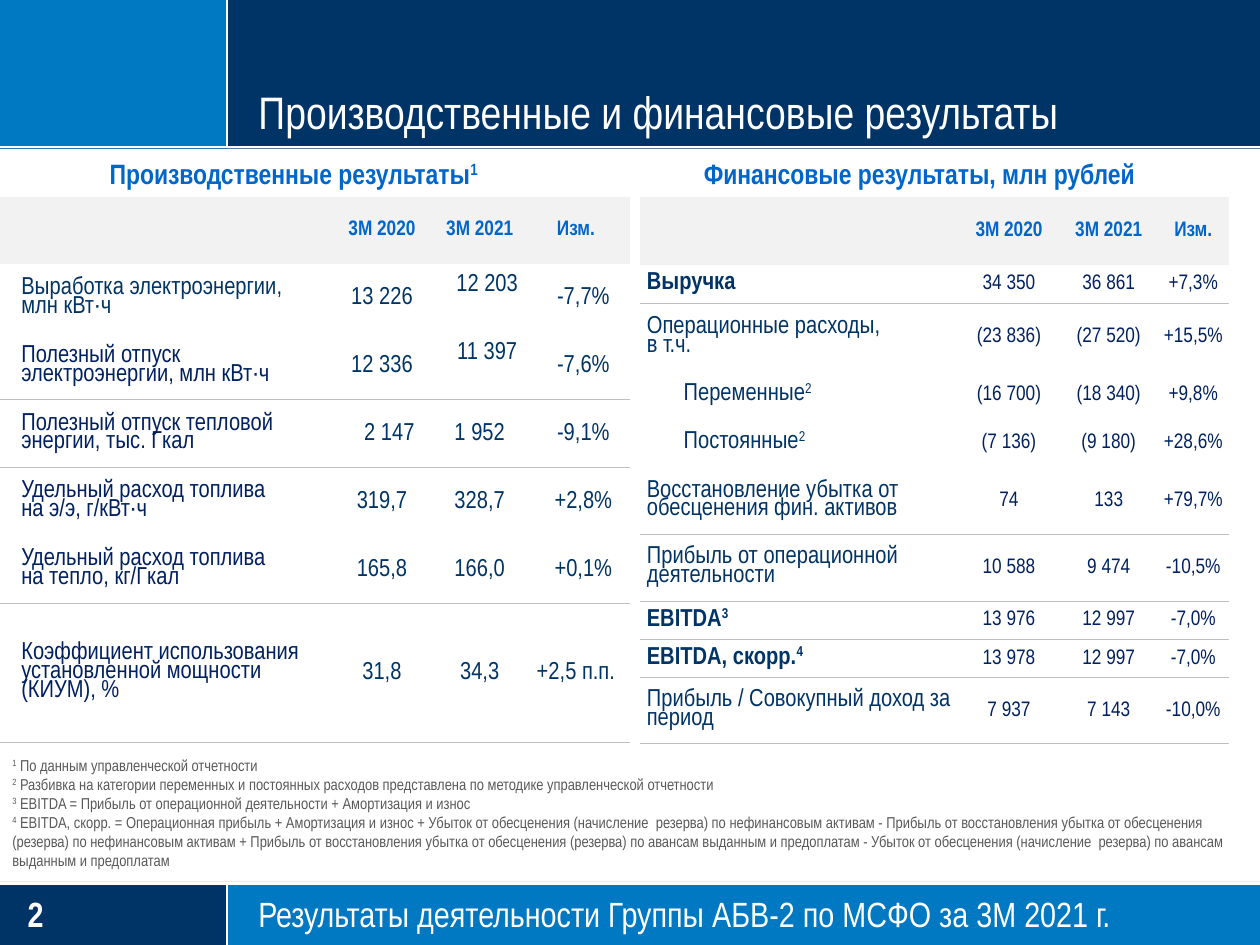
from lxml import etree
from pptx import Presentation
from pptx import util as u
from pptx.dml.color import RGBColor
from pptx.enum import shapes, text
from pptx.oxml.ns import qn

NAVY, SKY, WHITE = "003366", "0079C2", "FFFFFF"
INK, ACCENT, GREY = "002060", "0066CC", "595959"
HEADER_FILL, RULE = "F2F2F2", "BFBFBF"
NO_STYLE_TABLE = "{2D5ABB26-0587-4C30-8999-92F81FD0307C}"
LEFT, CENTER = text.PP_ALIGN.LEFT, text.PP_ALIGN.CENTER
BOTTOM, MIDDLE, TOP = (text.MSO_ANCHOR.BOTTOM, text.MSO_ANCHOR.MIDDLE,
                       text.MSO_ANCHOR.TOP)
PERIODS = ["3М 2020", "3М 2021", "Изм."]

# Each row: height, rule below, label, values, label format
FINANCE = [
    (0.77, True, "Выручка", ["34 350", "36 861", "+7,3%"], {"bold": True}),
    (1.37, False, "Операционные расходы,\nв т.ч.", ["(23 836)", "(27 520)", "+15,5%"], {}),
    (0.97, False, "Переменные^2^", ["(16 700)", "(18 340)", "+9,8%"], {"indent": 0.74}),
    (0.97, False, "Постоянные^2^", ["(7 136)", "(9 180)", "+28,6%"], {"indent": 0.74}),
    (1.35, True, "Восстановление убытка от обесценения фин. активов",
     ["74", "133", "+79,7%"], {}),
    (1.35, True, "Прибыль от операционной деятельности",
     ["10 588", "9 474", "-10,5%"], {}),
    (0.77, True, "EBITDA^3^", ["13 976", "12 997", "-7,0%"], {"bold": True}),
    (0.77, True, "EBITDA, скорр.^4^", ["13 978", "12 997", "-7,0%"], {"bold": True}),
    (1.33, True, "Прибыль / Совокупный доход за период",
     ["7 937", "7 143", "-10,0%"], {}),
]
PRODUCTION = [
    (1.37, False, "Выработка электроэнергии,\vмлн кВт∙ч",
     ["13 226", "12 203", "-7,7%"], {"color": NAVY}),
    (1.37, True, "Полезный отпуск электроэнергии, млн кВт∙ч",
     ["12 336", "11 397", "-7,6%"], {}),
    (1.37, True, "Полезный отпуск тепловой энергии, тыс. Гкал",
     ["2 147", "1 952", "-9,1%"], {}),
    (1.37, False, "Удельный расход топлива\vна э/э, г/кВт∙ч",
     ["319,7", "328,7", "+2,8%"], {}),
    (1.37, True, "Удельный расход топлива\vна тепло, кг/Гкал",
     ["165,8", "166,0", "+0,1%"], {}),
    (2.8, True, "Коэффициент использования установленной мощности (КИУМ), %",
     ["31,8", "34,3", "+2,5 п.п."], {}),
]
RAISED = {"12 203", "11 397"}
SHIFTED = RAISED | {"2 147", "-7,7%", "-7,6%", "-9,1%", "+2,8%", "+0,1%"}

FOOTNOTES = """^1^ По данным управленческой отчетности
^2^ Разбивка на категории переменных и постоянных расходов представлена по методике управленческой отчетности
^3^ EBITDA = Прибыль от операционной деятельности + Амортизация и износ
^4^ EBITDA, скорр. = Операционная прибыль + Амортизация и износ + Убыток от обесценения (начисление  резерва) по нефинансовым активам - Прибыль от восстановления убытка от обесценения (резерва) по нефинансовым активам + Прибыль от восстановления убытка от обесценения (резерва) по авансам выданным и предоплатам - Убыток от обесценения (начисление  резерва) по авансам выданным и предоплатам"""


def rgb(value):
    return RGBColor.from_string(value)


def write(frame, content, size=14, color=NAVY, bold=False, align=LEFT,
          indent=0, spacing=1.0, font="Arial Narrow"):
    """Fill a frame: \\n starts a paragraph, \\v a line, ^...^ is superscript."""
    for number, line in enumerate(content.split("\n")):
        paragraph = frame.add_paragraph() if number else frame.paragraphs[0]
        paragraph.alignment = align
        paragraph.line_spacing = spacing
        paragraph.space_before = paragraph.space_after = u.Pt(0)
        properties = paragraph._p.get_or_add_pPr()
        properties.set("marL", str(u.Cm(indent)))
        properties.set("indent", "0")
        etree.SubElement(properties, qn("a:buNone"))
        for part_number, part in enumerate(line.split("^")):
            for piece_number, piece in enumerate(part.split("\v")):
                if piece_number:
                    paragraph.add_line_break()
                if not piece:
                    continue
                run = paragraph.add_run()
                run.text = piece
                run.font.name, run.font.size, run.font.bold = font, u.Pt(size), bold
                run.font.color.rgb = rgb(color)
                if part_number % 2:
                    run.font._element.set("baseline", "30000")


def set_margins(target, left, top, right, bottom):
    target.margin_left, target.margin_top = u.Cm(left), u.Cm(top)
    target.margin_right, target.margin_bottom = u.Cm(right), u.Cm(bottom)


def rule_below(cell):
    line = etree.Element(qn("a:lnB"), w=str(u.Pt(0.75)))
    fill = etree.SubElement(line, qn("a:solidFill"))
    etree.SubElement(fill, qn("a:srgbClr"), val=RULE)
    cell._tc.get_or_add_tcPr().insert(0, line)


class ResultsSlide:
    def __init__(self, deck):
        self.slide = deck.slides.add_slide(deck.slide_layouts[1])
        self.shapes = self.slide.shapes

    def band(self, left, top, width, height, color):
        block = self.shapes.add_shape(shapes.MSO_SHAPE.RECTANGLE, *map(
            u.Cm, (left, top, width, height)))
        block.shadow.inherit = False
        block.fill.solid()
        block.fill.fore_color.rgb = rgb(color)
        block.line.fill.background()

    def divider(self, *ends):
        line = self.shapes.add_connector(shapes.MSO_CONNECTOR.STRAIGHT, *map(u.Cm, ends))
        line.line.color.rgb, line.line.width = rgb(WHITE), u.Pt(1.25)
        etree.SubElement(line._element.spPr, qn("a:effectLst"))

    def _fill_frame(self, holder, content, anchor, wrap=True, **style):
        frame = holder.text_frame
        frame.word_wrap = wrap
        frame.auto_size = text.MSO_AUTO_SIZE.NONE
        frame.vertical_anchor = anchor
        write(frame, content, **style)
        return frame

    def placeholder(self, index, place, content, anchor, **style):
        holder = self.slide.placeholders[index]
        holder.left, holder.top, holder.width, holder.height = map(u.Cm, place)
        set_margins(self._fill_frame(holder, content, anchor, **style), 0, 0, 0, 0)
        self.shapes._spTree.append(holder._element)  # in front of the bands

    def label(self, place, content, anchor=TOP, margins=(0, 0, 0, 0), **style):
        holder = self.shapes.add_textbox(*map(u.Cm, place))
        set_margins(self._fill_frame(holder, content, anchor, **style), *margins)

    def table(self, left, widths, header_height, rows, label_style, value_style):
        heights = [header_height] + [row[0] for row in rows]
        graphic = self.shapes.add_table(
            len(heights), len(widths), u.Cm(left), u.Cm(3.97),
            u.Cm(sum(widths)), u.Cm(sum(heights)))
        grid = graphic.table
        grid.horz_banding = grid.first_row = False
        grid._tbl.tblPr.find(qn("a:tableStyleId")).text = NO_STYLE_TABLE
        for column, width in zip(grid.columns, widths):
            column.width = u.Cm(width)
        for row, height in zip(grid.rows, heights):
            row.height = u.Cm(height)

        for cell, period in zip(grid.rows[0].cells, [""] + PERIODS):
            cell.fill.solid()
            cell.fill.fore_color.rgb = rgb(HEADER_FILL)
            cell.vertical_anchor = MIDDLE
            set_margins(cell, 0.13, 0.08, 0.13, 0.08)
            write(cell.text_frame, period, size=12, color=ACCENT, bold=True, align=CENTER)

        for number, (_, ruled, name, values, extra) in enumerate(rows, 1):
            for column, content in enumerate([name] + values):
                cell = grid.cell(number, column)
                cell.fill.background()
                cell.vertical_anchor = MIDDLE
                if column:
                    set_margins(cell, 0.03, 0.03, 0.03, 0.5 if content in RAISED else 0)
                    style = {**value_style, "align": CENTER,
                             "indent": 0.3 if content in SHIFTED else 0}
                else:
                    set_margins(cell, 0.13, 0.08, 0.13, 0.08)
                    style = {**label_style, **extra}
                write(cell.text_frame, content, spacing=0.82, **style)
                if ruled:
                    rule_below(cell)


def main():
    deck = Presentation()
    deck.slide_width, deck.slide_height = u.Cm(25.4), u.Cm(19.05)
    page = ResultsSlide(deck)

    page.band(0, 0, 25.4, 3, NAVY)
    page.band(0, 17.78, 25.4, 1.27, SKY)
    page.band(0, 17.81, 4.57, 1.24, NAVY)
    page.band(0, 0, 4.57, 3, SKY)
    for y in (2.97, 17.81):
        page.divider(0, y, 25.4, y)
    for top, bottom in ((17.78, 19.05), (0, 2.97)):
        page.divider(4.57, top, 4.57, bottom)

    page.table(12.91, [6.4, 2.06, 1.96, 1.45], 1.37, FINANCE,
               {"color": NAVY}, {"size": 12, "color": INK})
    page.table(0, [6.58, 2.24, 1.7, 2.18], 1.35, PRODUCTION,
               {"color": INK, "indent": 0.3}, {"color": NAVY})

    page.placeholder(0, (5.21, 0, 19.58, 2.79), "Производственные и финансовые результаты",
                     BOTTOM, size=26, color=WHITE)
    page.placeholder(1, (5.21, 17.98, 19.58, 0.86),
                     "Результаты деятельности Группы АБВ-2 по МСФО за 3М 2021 г.",
                     MIDDLE, size=20, color=WHITE)
    page.label((0, 15.09, 25.4, 2.57), FOOTNOTES, BOTTOM,
               (0.25, 0.13, 0.25, 0.13), size=9, color=GREY)
    for left, width, heading in ((2.11, 7.62, "Производственные результаты^1^"),
                                 (14, 9.07, "Финансовые результаты, млн рублей")):
        page.label((left, 3.15, width, 0.69), heading, wrap=False, size=16,
                   color=ACCENT, bold=True, align=CENTER)
    page.label((0.56, 17.98, 3.35, 0.86), "2", MIDDLE, size=20, color=WHITE, bold=True)
    deck.save("out.pptx")


if __name__ == "__main__":
    main()
